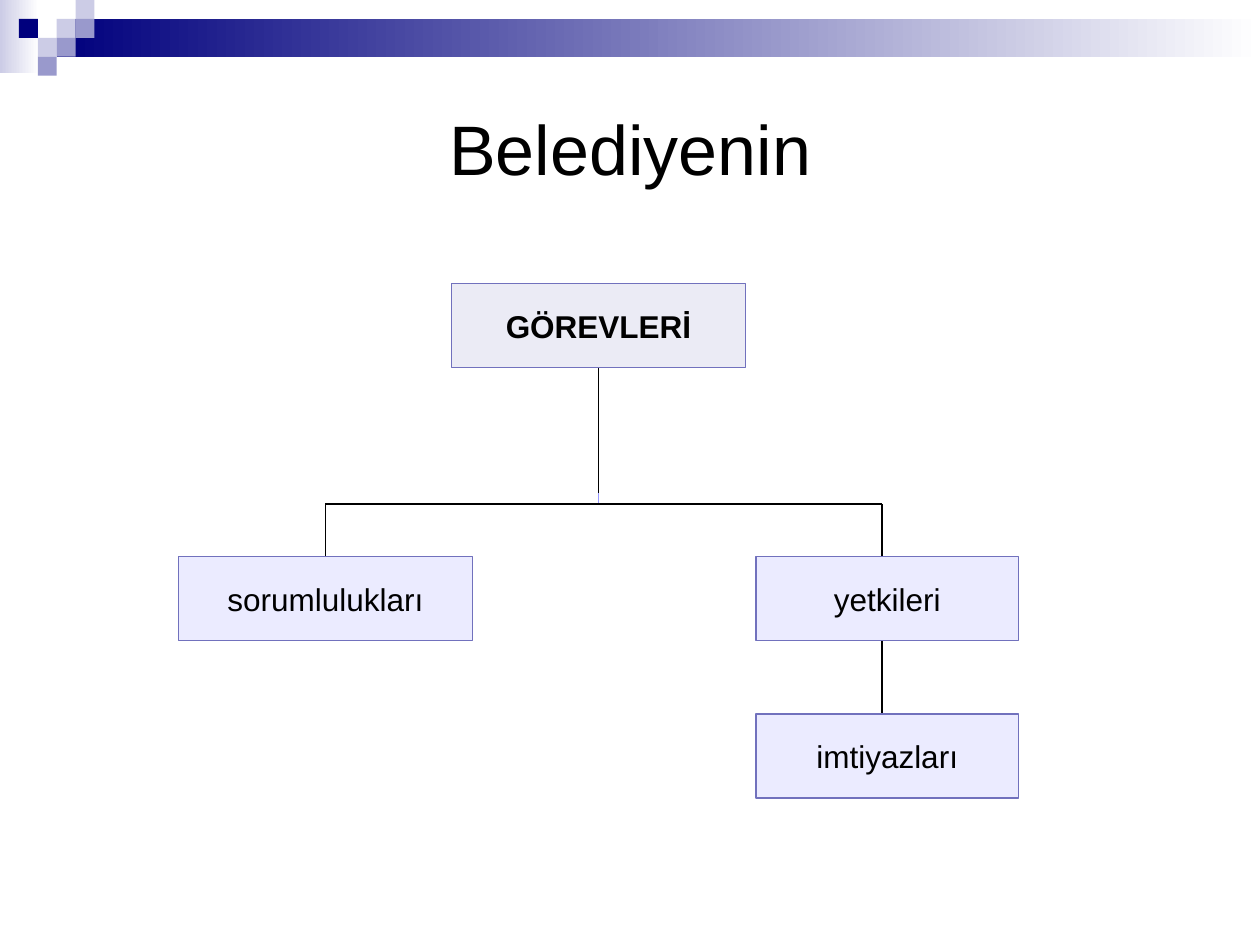
from lxml.etree import SubElement
from pptx import Presentation
from pptx.dml.color import RGBColor
from pptx.enum.shapes import MSO_CONNECTOR, MSO_SHAPE
from pptx.enum.text import MSO_ANCHOR, PP_ALIGN
from pptx.oxml.ns import qn
from pptx.util import Pt

PX = 7620
COLORS = {
    "navy": "00007D", "mid": "9999CC", "light": "CCCCE6", "white": "FFFFFF",
    "black": "000000", "root": "EBEBF5", "node": "EBEBFF",
    "border": "7171BD", "tick": "9999FF",
}


def rgb(name):
    """Return the named colour."""
    return RGBColor.from_string(COLORS[name])


def set_text(sp, text, size, bold=False):
    """Write one centred line of text in a shape."""
    tf = sp.text_frame
    tf.word_wrap = True
    tf.vertical_anchor = MSO_ANCHOR.MIDDLE
    p = tf.paragraphs[0]
    p.text = text
    p.alignment = PP_ALIGN.CENTER
    p.font.name = "Arial"
    p.font.size = Pt(size)
    p.font.bold = bold
    p.font.color.rgb = rgb("black")


def add_rect(s, box, fill, fade_to=None, border=None):
    """Add a rectangle with a solid fill or a left-to-right gradient."""
    sp = s.shapes.add_shape(MSO_SHAPE.RECTANGLE, *(v * PX for v in box))
    sp.shadow.inherit = False
    if fade_to:
        sp.fill.gradient()
        sp.fill.gradient_angle = 0
        for stop, name in zip(sp.fill.gradient_stops, (fill, fade_to)):
            stop.color.rgb = rgb(name)
    else:
        sp.fill.solid()
        sp.fill.fore_color.rgb = rgb(fill)
    if border:
        sp.line.color.rgb = rgb(border)
        sp.line.width = Pt(1)
    else:
        sp.line.fill.background()
    return sp


def add_line(s, x1, y1, x2, y2, color="black", width=1):
    """Add a straight connector without a shadow."""
    line = s.shapes.add_connector(
        MSO_CONNECTOR.STRAIGHT, x1 * PX, y1 * PX, x2 * PX, y2 * PX)
    line.line.color.rgb = rgb(color)
    line.line.width = Pt(width)
    SubElement(line._element.spPr, qn("a:effectLst"))


def add_banner(s, x, y, w):
    """Add the gradient bars and the grid of small squares."""
    cell = 18
    add_rect(s, (x, y, 37, 70), "light", "white")
    add_rect(s, (x + 3 * cell, y + cell, w - 3 * cell, 2 * cell), "navy", "white")
    squares = [(3, 1, "light"), (4, 0, "light"), (4, 1, "mid"), (2, 2, "light"),
               (1, 1, "navy"), (3, 2, "mid"), (2, 3, "mid")]
    for col, row, color in squares:
        add_rect(s, (x + col * cell, y + row * cell, cell, cell), color)


def add_title(s, x, y, w, h, text):
    """Place and format the title placeholder."""
    sp = s.shapes.title
    sp.left, sp.top, sp.width, sp.height = (v * PX for v in (x, y, w, h))
    set_text(sp, text, 40)


def add_chart_tree(s, x, y):
    """Add the hierarchy of duties with its connecting lines."""
    left, stem, right = x + 140, x + 400, x + 670
    bus, row, leaf = y + 210, y + 260, y + 410
    h = 80
    add_line(s, stem, y + h, stem, bus)
    add_line(s, stem, bus - 10, stem, bus, "tick", 0.5)
    add_line(s, left, bus, right, bus)
    for branch in (left, right):
        add_line(s, branch, bus, branch, row)
    add_line(s, right, row + h, right, leaf)
    nodes = [
        ("GÖREVLERİ", x + 260, y, 280, "root", True),
        ("sorumlulukları", x, row, 280, "node", False),
        ("yetkileri", x + 550, row, 250, "node", False),
        ("imtiyazları", x + 550, leaf, 250, "node", False),
    ]
    for text, nx, ny, w, fill, bold in nodes:
        sp = add_rect(s, (nx, ny, w, h), fill, border="border")
        set_text(sp, text, 18, bold)


def main():
    """Build and save the slide."""
    prs = Presentation()
    prs.slide_width, prs.slide_height = 1200 * PX, 900 * PX
    s = prs.slides.add_slide(prs.slide_layouts[5])
    add_banner(s, 0, 0, 1200)
    add_title(s, 60, 60, 1080, 161, "Belediyenin")
    add_chart_tree(s, 170, 270)
    prs.save("out.pptx")


if __name__ == "__main__":
    main()
